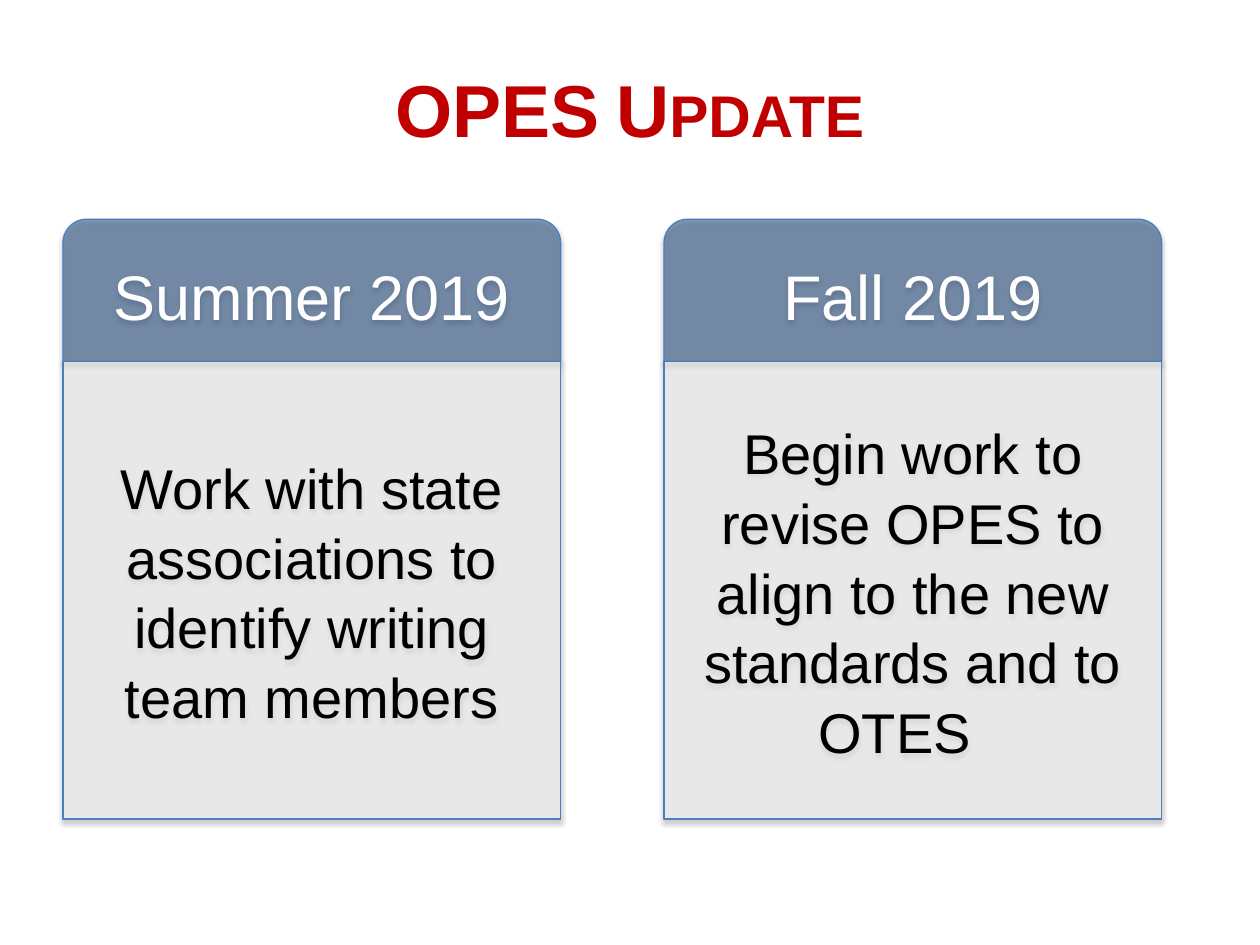
from lxml import etree
from pptx import Presentation
from pptx.dml.color import RGBColor
from pptx.enum.shapes import MSO_SHAPE
from pptx.enum.text import MSO_ANCHOR, PP_ALIGN
from pptx.oxml import parse_xml
from pptx.oxml.ns import nsdecls, qn
from pptx.util import Inches, Pt

ROUND = MSO_SHAPE.ROUND_2_SAME_RECTANGLE
RECT = MSO_SHAPE.RECTANGLE
MIDDLE, BOTTOM = MSO_ANCHOR.MIDDLE, MSO_ANCHOR.BOTTOM
CENTER = PP_ALIGN.CENTER

RED, NAVY, WHITE, BLACK, BLUE = "C00000", "1F497D", "FFFFFF", "000000", "4B7EBC"
LEFT, TOP, WIDTH, STEP = 0.5, 1.74, 3.95, 4.77
HEAD, BODY = 1.13, 3.63
CARDS = [
    ("Summer 2019",
     "Work with state associations to identify writing team members"),
    ("Fall 2019",
     "Begin work to revise OPES to align to the new standards and to OTES\t"),
]


def color(code):
    return RGBColor.from_string(code)


def write(shape, text, size, ink, bold=False, small=False, anchor=MIDDLE):
    frame = shape.text_frame
    frame.word_wrap = True
    frame.vertical_anchor = anchor
    para = frame.paragraphs[0]
    para.alignment = CENTER
    para.line_spacing = 1.04
    run = para.add_run()
    run.text = text
    font = run.font
    font.name, font.size, font.bold = "Arial", Pt(size), bold
    font.color.rgb = color(ink)
    if small:
        run._r.get_or_add_rPr().set("cap", "small")


def add_shadow(shape):
    shape._element.spPr.append(parse_xml(
        f'<a:effectLst {nsdecls("a")}>'
        f'<a:outerShdw blurRad="{Pt(3.1)}" dist="{Pt(1.8)}" dir="5400000" '
        'rotWithShape="0"><a:srgbClr val="000000"><a:alpha val="35000"/>'
        '</a:srgbClr></a:outerShdw></a:effectLst>'))


def add_panel(slide, kind, left, top, height, fill):
    shape = slide.shapes.add_shape(
        kind, Inches(left), Inches(top), Inches(WIDTH), Inches(height))
    shape.fill.solid()
    shape.fill.fore_color.rgb = color(fill)
    # Let the shadow show through the fill
    tint = shape._element.spPr.find(f'{qn("a:solidFill")}/{qn("a:srgbClr")}')
    etree.SubElement(tint, qn("a:alpha")).set("val", "53000")
    shape.line.color.rgb = color(BLUE)
    shape.line.width = Pt(0.75)
    add_shadow(shape)
    return shape


def add_title(slide, text):
    box = slide.shapes.add_textbox(
        Inches(0.5), Inches(0.5), Inches(9), Inches(0.71))
    frame = box.text_frame
    frame.margin_left = frame.margin_right = 0
    frame.margin_top = frame.margin_bottom = 0
    write(box, text, 42, RED, bold=True, small=True, anchor=BOTTOM)


def add_card(slide, left, head, body):
    top = add_panel(slide, ROUND, left, TOP, HEAD, NAVY)
    write(top, head, 36, WHITE)
    base = add_panel(slide, RECT, left, TOP + HEAD, BODY, WHITE)
    write(base, body, 32, BLACK)


def main():
    deck = Presentation()
    deck.slide_width, deck.slide_height = Inches(10), Inches(7.5)
    slide = deck.slides.add_slide(deck.slide_layouts[6])
    add_title(slide, "OPES Update")
    # One card per season
    for i, (head, body) in enumerate(CARDS):
        add_card(slide, LEFT + i * STEP, head, body)
    deck.save("out.pptx")


if __name__ == "__main__":
    main()
